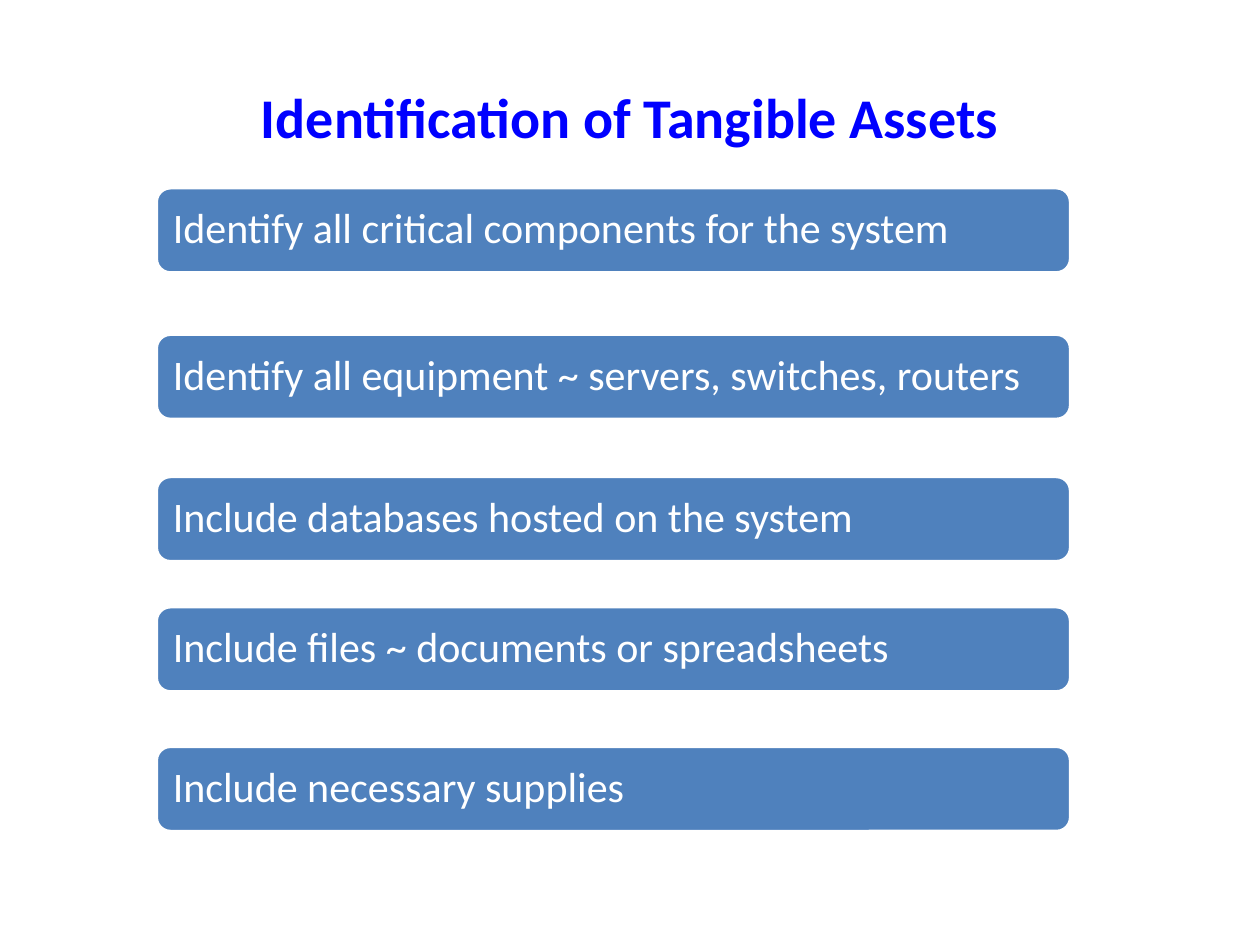
from pptx import Presentation
from pptx.dml.color import RGBColor
from pptx.enum.shapes import MSO_SHAPE
from pptx.enum.text import MSO_ANCHOR, PP_ALIGN
from pptx.util import Pt

TITLE = "Identification of Tangible Assets"
# (top in points, text)
STEPS = [
    (107.3, "Identify all critical components for the system"),
    (191, "Identify all equipment ~ servers, switches, routers"),
    (272.3, "Include databases hosted on the system"),
    (346.7, "Include files ~ documents or spreadsheets"),
    (426.5, "Include necessary supplies"),
]
BAR_LEFT, BAR_WIDTH, BAR_HEIGHT = 89.3, 522.5, 48.7
BAR_MARGIN = 7.2
WHITE, BLUE, TITLE_BLUE = "FFFFFF", "4F81BD", "0000FF"


def color(hex_string):
    return RGBColor.from_string(hex_string)


def place(shape, left, top, width, height):
    shape.left, shape.top = Pt(left), Pt(top)
    shape.width, shape.height = Pt(width), Pt(height)


def write(shape, text, size, hex_string, align, bold=False):
    frame = shape.text_frame
    frame.word_wrap = True
    frame.vertical_anchor = MSO_ANCHOR.MIDDLE
    paragraph = frame.paragraphs[0]
    paragraph.text = text
    paragraph.alignment = align
    font = paragraph.font
    font.name, font.size, font.bold = "Calibri", Pt(size), bold
    font.color.rgb = color(hex_string)
    return paragraph


def add_bar(slide, top, text):
    bar = slide.shapes.add_shape(
        MSO_SHAPE.ROUNDED_RECTANGLE,
        Pt(BAR_LEFT), Pt(top), Pt(BAR_WIDTH), Pt(BAR_HEIGHT))
    bar.shadow.inherit = False
    bar.fill.solid()
    bar.fill.fore_color.rgb = color(BLUE)
    bar.line.color.rgb = color(WHITE)
    bar.line.width = Pt(2)
    frame = bar.text_frame
    frame.margin_left = frame.margin_right = Pt(BAR_MARGIN)
    frame.margin_top = frame.margin_bottom = Pt(BAR_MARGIN)
    write(bar, text, 24, WHITE, PP_ALIGN.LEFT).line_spacing = 0.9


def main():
    presentation = Presentation()
    presentation.slide_width, presentation.slide_height = Pt(720), Pt(540)
    slide = presentation.slides.add_slide(presentation.slide_layouts[5])
    title = slide.shapes.title
    place(title, 36, 21.6, 648, 90)
    write(title, TITLE, 32, TITLE_BLUE, PP_ALIGN.CENTER, bold=True)
    for top, text in STEPS:
        add_bar(slide, top, text)
    presentation.save("out.pptx")


if __name__ == "__main__":
    main()
